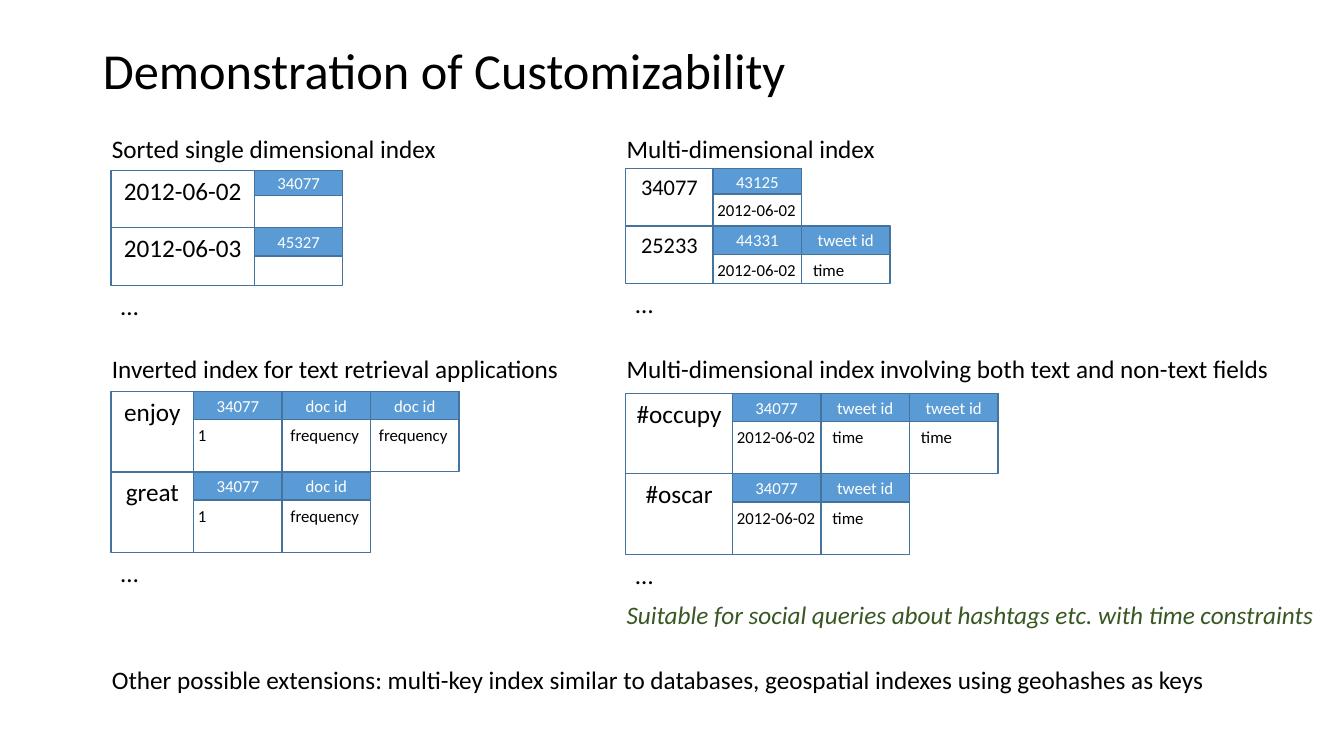
from pptx import Presentation
from pptx.dml.color import RGBColor
from pptx.enum.shapes import MSO_SHAPE
from pptx.enum.text import MSO_ANCHOR, PP_ALIGN
from pptx.util import Cm, Pt

RECT = MSO_SHAPE.RECTANGLE
TOP, MIDDLE = MSO_ANCHOR.TOP, MSO_ANCHOR.MIDDLE
LEFT, CENTER = PP_ALIGN.LEFT, PP_ALIGN.CENTER

BLACK = RGBColor(0x00, 0x00, 0x00)
WHITE = RGBColor(0xFF, 0xFF, 0xFF)
BLUE = RGBColor(0x5B, 0x9B, 0xD5)
EDGE = RGBColor(0x43, 0x73, 0x9E)
GREEN = RGBColor(0x38, 0x57, 0x23)

CELL = 2.23
DATE = "2012-06-02"
# Shift and width of the text below each id
FIT = {"time": (0.04, 1.75), "frequency": (-0.04, 2.3)}


def write(frame, text, size, color=BLACK, align=LEFT, anchor=TOP):
    frame.word_wrap = True
    frame.vertical_anchor = anchor
    frame.text = text
    par = frame.paragraphs[0]
    par.alignment = align
    par.font.name = "Calibri"
    par.font.size = Pt(size)
    par.font.color.rgb = color
    return par


def note(slide, box, text, size=18, color=BLACK):
    shape = slide.shapes.add_textbox(*map(Cm, box))
    return write(shape.text_frame, text, size, color)


def rect(slide, box, fill=None):
    shape = slide.shapes.add_shape(RECT, *map(Cm, box))
    shape.shadow.inherit = False
    if fill is None:
        shape.fill.background()
    else:
        shape.fill.solid()
        shape.fill.fore_color.rgb = fill
    shape.line.color.rgb = EDGE
    shape.line.width = Pt(1)
    frame = shape.text_frame
    frame.margin_left = frame.margin_right = Cm(0.1)
    return frame


def entry(slide, box, head, name, value):
    """One cell: outline, blue id bar and value below it."""
    left, top, width, height = box
    rect(slide, box)
    bar = rect(slide, (left, top, width, head), BLUE)
    write(bar, name, 12, WHITE, CENTER, MIDDLE)
    if value:
        shift, wide = FIT.get(value, (-0.14, 2.6))
        note(slide, (left + shift, top + head + 0.02, wide, 0.76), value, 12)


def index(slide, box, label, gap, key, size, rows):
    """Label, rows of key and cells, then an ellipsis."""
    left, top, width, height = box
    note(slide, (left, top, width, 1.02), label)
    edge = left + 0.23
    for i, (word, head, cells) in enumerate(rows):
        y = top + gap + i * height
        for j, (name, value) in enumerate(cells):
            spot = (edge + key + j * CELL, y, CELL, height)
            entry(slide, spot, head, name, value)
        frame = rect(slide, (edge, y, key, height))
        write(frame, word, size, align=CENTER)
    end = top + gap + len(rows) * height
    note(slide, (edge, end, 2.4, 1.02), "…")


def heading(slide, box, text):
    title = slide.shapes.title
    title.left, title.top, title.width, title.height = map(Cm, box)
    par = write(title.text_frame, text, 36, anchor=MIDDLE)
    par.line_spacing = 0.9


def main():
    deck = Presentation()
    deck.slide_width, deck.slide_height = Cm(33.87), Cm(19.05)
    slide = deck.slides.add_slide(deck.slide_layouts[5])
    heading(slide, (2.34, 0, 30.4, 3.68), "Demonstration of Customizability")

    # Four indexes: each box gives left, top, label width and row height
    west, east, upper, lower = 2.57, 15.54, 3.23, 8.79
    index(slide, (west, upper, 8.84, 1.45),
          "Sorted single dimensional index", 1.06, 3.61, 18, [
              (DATE, 0.64, [("34077", "")]),
              ("2012-06-03", 0.71, [("45327", "")])])
    index(slide, (east, upper, 7.11, 1.45),
          "Multi-dimensional index", 1.02, 2.2, 16, [
              ("34077", 0.64, [("43125", DATE)]),
              ("25233", 0.71, [("44331", DATE), ("tweet id", "time")])])
    doc = ("doc id", "frequency")
    index(slide, (west, lower, 11.79, 2.03),
          "Inverted index for text retrieval applications", 1.07, 2.08, 18, [
              ("enjoy", 0.71, [("34077", "1"), doc, doc]),
              ("great", 0.71, [("34077", "1"), doc])])
    tweet = ("tweet id", "time")
    index(slide, (east, lower, 17.86, 2.03),
          "Multi-dimensional index involving both text and non-text fields",
          1.12, 2.69, 18, [
              ("#occupy", 0.71, [("34077", DATE), tweet, tweet]),
              ("#oscar", 0.71, [("34077", DATE), tweet])])

    # Closing remarks
    remark = note(slide, (east, 14.99, 17.86, 1.02),
                  "Suitable for social queries about hashtags etc. "
                  "with time constraints", color=GREEN)
    remark.font.italic = True
    note(slide, (west, 16.61, 28.37, 1.02),
         "Other possible extensions: multi-key index similar to databases, "
         "geospatial indexes using geohashes as keys")
    deck.save("out.pptx")


if __name__ == "__main__":
    main()
